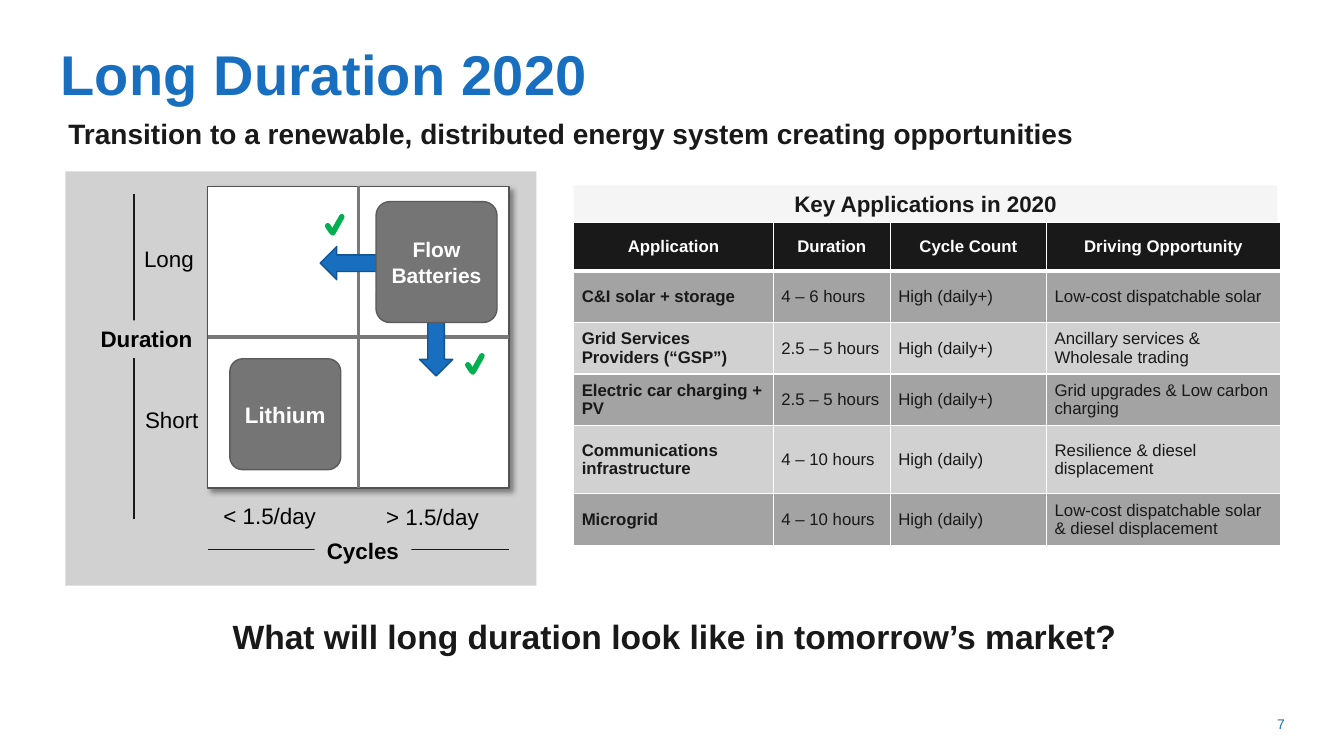
from lxml import etree
from pptx import Presentation
from pptx.dml.color import RGBColor
from pptx.enum.shapes import MSO_CONNECTOR, MSO_SHAPE
from pptx.enum.text import MSO_ANCHOR, MSO_AUTO_SIZE, PP_ALIGN
from pptx.oxml.ns import qn
from pptx.util import Inches, Pt

RECTANGLE, ROUNDED = MSO_SHAPE.RECTANGLE, MSO_SHAPE.ROUNDED_RECTANGLE
UP_ARROW = MSO_SHAPE.UP_ARROW
STRAIGHT = MSO_CONNECTOR.STRAIGHT
LEFT, CENTER = PP_ALIGN.LEFT, PP_ALIGN.CENTER
TOP, MIDDLE = MSO_ANCHOR.TOP, MSO_ANCHOR.MIDDLE
NO_AUTOFIT = MSO_AUTO_SIZE.NONE

BLUE, INK, BLACK, WHITE = "196FBF", "191919", "000000", "FFFFFF"
PALE, MID, GREEN = "D1D1D1", "A3A3A3", "00B050"

COLUMN_WIDTHS = (1.98, 1.16, 1.55, 2.32)
ROW_HEIGHTS = (0.48, 0.51, 0.51, 0.51, 0.68, 0.51)
APPLICATIONS = (
    ("Application", "Duration", "Cycle Count", "Driving Opportunity"),
    ("C&I solar + storage", "4 – 6 hours", "High (daily+)", "Low-cost dispatchable solar"),
    ("Grid Services Providers (“GSP”)", "2.5 – 5 hours", "High (daily+)",
     "Ancillary services & Wholesale trading"),
    ("Electric car charging + PV", "2.5 – 5 hours", "High (daily+)",
     "Grid upgrades & Low carbon charging"),
    ("Communications infrastructure", "4 – 10 hours", "High (daily)",
     "Resilience & diesel displacement"),
    ("Microgrid", "4 – 10 hours", "High (daily)",
     "Low-cost dispatchable solar & diesel displacement"),
)


def rgb(color):
    return RGBColor.from_string(color)


def write(frame, text, size=16, color=BLACK, bold=False, align=LEFT, anchor=TOP,
          line_spacing=None):
    frame.word_wrap = True
    frame.vertical_anchor = anchor
    para = frame.paragraphs[0]
    para.alignment = align
    if line_spacing:
        para.line_spacing = line_spacing
    span = para.add_run()
    span.text = text
    span.font.name = "Arial"
    span.font.size = Pt(size)
    span.font.bold = bold
    span.font.color.rgb = rgb(color)
    return span


def add_text(page, text, left, top, width, height, **text_format):
    box = page.shapes.add_textbox(Inches(left), Inches(top), Inches(width), Inches(height))
    write(box.text_frame, text, **text_format)


def add_shape(page, kind, left, top, width, height, fill, line=None, text=None, **text_format):
    shape = page.shapes.add_shape(kind, Inches(left), Inches(top), Inches(width), Inches(height))
    shape.shadow.inherit = False
    shape.fill.solid()
    shape.fill.fore_color.rgb = rgb(fill)
    if line:
        shape.line.color.rgb = rgb(line)
        shape.line.width = Pt(1)
    else:
        shape.line.fill.background()
    if text:
        write(shape.text_frame, text, **text_format)
    return shape


def add_line(page, x1, y1, x2, y2, color=INK, width=1, cap="flat"):
    line = page.shapes.add_connector(STRAIGHT, Inches(x1), Inches(y1), Inches(x2), Inches(y2))
    line.line.color.rgb = rgb(color)
    line.line.width = Pt(width)
    properties = line._element.spPr
    properties.find(qn("a:ln")).set("cap", cap)
    etree.SubElement(properties, qn("a:effectLst"))


def add_tick(page, x, y):
    add_line(page, x, y, x + 0.04, y + 0.06, GREEN, 4, "rnd")
    add_line(page, x + 0.05, y + 0.07, x + 0.14, y - 0.09, GREEN, 4, "rnd")


def add_battery(page, text, left, top, side, size):
    battery = add_shape(page, ROUNDED, left, top, side, side, "757575", "5B5B5B", text,
                        size=size, color=WHITE, bold=True, align=CENTER, anchor=MIDDLE)
    battery.adjustments[0] = 0.115


def add_arrow(page, left, top, rotation):
    arrow = add_shape(page, UP_ARROW, left, top, 0.33, 0.72, BLUE, "13538F")
    arrow.rotation = rotation


def add_drop_shadow(shape):
    effects = shape._element.spPr.find(qn("a:effectLst"))
    shadow = etree.SubElement(effects, qn("a:outerShdw"), blurRad=str(Pt(4)), dist=str(Pt(3)),
                              dir="2700000", algn="tl", rotWithShape="0")
    color = etree.SubElement(shadow, qn("a:srgbClr"), val=BLACK)
    etree.SubElement(color, qn("a:alpha"), val="40000")


def set_borders(cell, top, bottom):
    """Give the cell white borders; top and bottom widths are in points."""
    properties = cell._tc.get_or_add_tcPr()
    sides = (("a:lnL", 1), ("a:lnR", 1), ("a:lnT", top), ("a:lnB", bottom))
    for index, (tag, width) in enumerate(sides):
        border = etree.Element(qn(tag), w=str(Pt(width)))
        fill = etree.SubElement(border, qn("a:solidFill"))
        etree.SubElement(fill, qn("a:srgbClr"), val=WHITE)
        properties.insert(index, border)


def add_applications_table(page, left, top):
    frame = page.shapes.add_table(len(ROW_HEIGHTS), len(COLUMN_WIDTHS), Inches(left), Inches(top),
                                  Inches(sum(COLUMN_WIDTHS)), Inches(sum(ROW_HEIGHTS)))
    table = frame.table
    for column, width in zip(table.columns, COLUMN_WIDTHS):
        column.width = Inches(width)
    for row, height in zip(table.rows, ROW_HEIGHTS):
        row.height = Inches(height)
    for i, texts in enumerate(APPLICATIONS):
        header = i == 0
        for j, text in enumerate(texts):
            cell = table.cell(i, j)
            cell.margin_left = cell.margin_right = Inches(0.08)
            cell.margin_top = cell.margin_bottom = Inches(0.04)
            cell.vertical_anchor = MIDDLE
            cell.fill.solid()
            cell.fill.fore_color.rgb = rgb(INK if header else MID if i % 2 else PALE)
            set_borders(cell, top=3 if i == 1 else 1, bottom=3 if header else 1)
            write(cell.text_frame, text, size=12, color=WHITE if header else INK,
                  bold=header or j == 0, align=CENTER if header else LEFT, anchor=MIDDLE)


def add_quadrant(page):
    left, top, side = 2.06, 1.85, 2.99
    right, bottom, half = left + side, top + side, side / 2
    add_shape(page, RECTANGLE, 0.65, 1.7, 4.67, 4.11, PALE)
    add_drop_shadow(add_shape(page, RECTANGLE, left, top, side, side, WHITE, "525252"))
    add_line(page, left, top + half, right, top + half, "797979", 2.5)
    add_line(page, left + half, top, left + half, bottom, "797979", 2.5)

    add_battery(page, "Lithium", 2.28, 3.56, 1.1, 16)
    add_arrow(page, 4.16, 3.01, 180)
    add_arrow(page, 3.37, 2.25, 270)
    add_battery(page, "Flow Batteries", 3.73, 2, 1.2, 15)
    add_tick(page, 4.64, 3.62)
    add_tick(page, 3.25, 2.24)

    add_text(page, "Long", 1.33, 2.38, 0.75, 0.37)
    add_text(page, "Short", 1.34, 3.98, 0.78, 0.37)
    add_text(page, "< 1.5/day", 1.77, 4.93, 1.81, 0.37, align=CENTER)
    add_text(page, "> 1.5/day", 3.54, 4.94, 1.5, 0.37, align=CENTER)

    add_line(page, left, 5.45, right, 5.45)
    add_shape(page, RECTANGLE, 3.12, 5.28, 0.96, 0.37, PALE, text="Cycles",
              bold=True, align=CENTER)
    add_line(page, 1.33, 5.15, 1.33, 1.92)
    add_shape(page, RECTANGLE, 0.9, 3.18, 1.13, 0.37, PALE, text="Duration", bold=True)


def set_title(page, text):
    title = page.shapes.title
    title.left, title.top = Inches(0.5), Inches(0.42)
    title.width, title.height = Inches(12.17), Inches(0.55)
    title.text_frame.auto_size = NO_AUTOFIT
    span = write(title.text_frame, text, size=40, color=BLUE, bold=True, line_spacing=0.9)
    span.font._element.set("spc", "20")


def main():
    deck = Presentation()
    deck.slide_width, deck.slide_height = Inches(13.33), Inches(7.5)
    page = deck.slides.add_slide(deck.slide_layouts[5])
    set_title(page, "Long Duration 2020")
    add_text(page, "Transition to a renewable, distributed energy system creating opportunities",
             0.58, 1.11, 12, 0.44, size=20, color=INK, bold=True)
    add_quadrant(page)
    add_shape(page, RECTANGLE, 5.69, 1.84, 6.98, 0.37, "F5F5F5", text="Key Applications in 2020",
              color=INK, bold=True, align=CENTER)
    add_applications_table(page, 5.69, 2.21)
    add_text(page, "What will long duration look like in tomorrow’s market?",
             0.69, 6.11, 12, 0.49, size=24, color=INK, bold=True, align=CENTER, line_spacing=0.9)
    add_text(page, "7", 12.31, 6.98, 0.79, 0.4, size=10, color=BLUE, align=CENTER, anchor=MIDDLE)
    deck.save("out.pptx")


if __name__ == "__main__":
    main()
